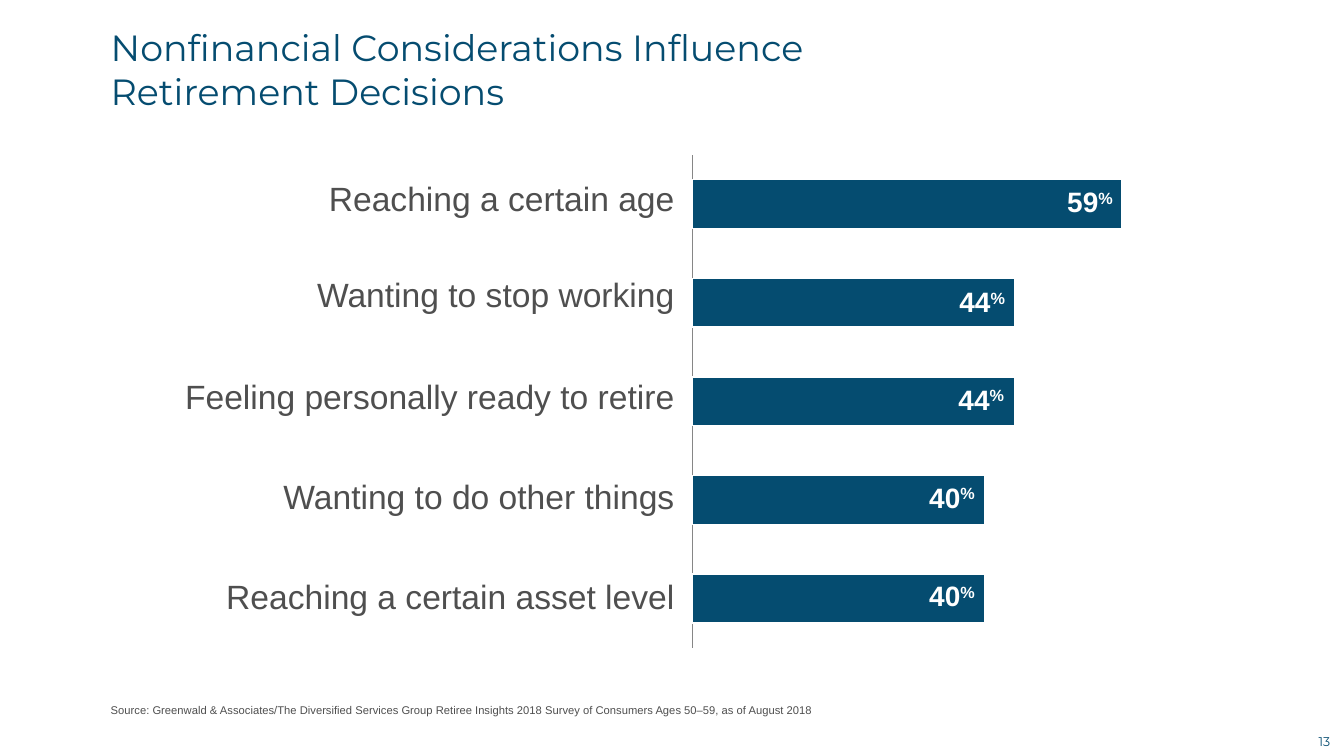
from lxml import etree
from pptx import Presentation
from pptx.chart.data import CategoryChartData
from pptx.dml.color import RGBColor
from pptx.enum.chart import XL_CHART_TYPE as ChartType, XL_TICK_LABEL_POSITION as LabelPos
from pptx.enum.chart import XL_TICK_MARK as Tick
from pptx.enum.text import MSO_ANCHOR as Anchor, PP_ALIGN as Align
from pptx.oxml.ns import qn
from pptx.util import Pt

NAVY = RGBColor(0x05, 0x4C, 0x70)
GRAY = RGBColor(0x4F, 0x4F, 0x4F)
AXIS_GRAY = RGBColor(0x86, 0x86, 0x86)
WHITE = RGBColor(0xFF, 0xFF, 0xFF)

# Reason, percent, bar length, label top, percent top, percent right edge
REASONS = [
    ("Reaching a certain age", 59, 100, 127.4, 131.8, 802),
    ("Wanting to stop working", 44, 75, 195.8, 203, 725),
    ("Feeling personally ready to retire", 44, 75, 268.6, 272.9, 724.3),
    ("Wanting to do other things", 40, 68, 339.8, 342.7, 703.4),
    ("Reaching a certain asset level", 40, 68, 411.1, 413.3, 703.4),
]
LABEL_RIGHT, LABEL_W, LABEL_H = 481.7, 380, 28.8
PERCENT_W, PERCENT_H = 104.4, 24.5


class SlideBuilder:
    font = "Arial"
    heading_font = "Montserrat"

    def __init__(self, prs):
        self.s = prs.slides.add_slide(prs.slide_layouts[6])

    def text(self, box, lines, size, color=GRAY, font=None, align=Align.LEFT,
             anchor=Anchor.TOP, bold=False, left=0, right=0, after=0, superscript=None):
        sp = self.s.shapes.add_textbox(*(Pt(v) for v in box))
        tf = sp.text_frame
        tf.word_wrap = True
        tf.vertical_anchor = anchor
        tf.margin_left, tf.margin_right = Pt(left), Pt(right)
        tf.margin_top = tf.margin_bottom = 0
        p = tf.paragraphs[0]
        p.alignment = align
        p.space_after = Pt(after)

        def run(value):
            r = p.add_run()
            r.text = value
            r.font.name = font or self.font
            r.font.size = Pt(size)
            r.font.bold = bold
            r.font.color.rgb = color
            return r

        for i, line in enumerate(lines):
            if i:
                p.add_line_break()
            run(line)
        if superscript:
            run(superscript)._r.get_or_add_rPr().set("baseline", "30000")

    def bar_chart(self, box, names, values, maximum, layout):
        data = CategoryChartData()
        data.categories = names
        data.add_series("Series 1", values)
        chart = self.s.shapes.add_chart(
            ChartType.BAR_CLUSTERED, *(Pt(v) for v in box), data).chart
        chart.has_legend = chart.has_title = False
        chart.font.name, chart.font.size = self.font, Pt(10)
        chart.font.color.rgb = GRAY

        # Axes
        cat, val = chart.category_axis, chart.value_axis
        cat.reverse_order = True
        cat.tick_label_position = LabelPos.NONE
        cat.major_tick_mark = cat.minor_tick_mark = Tick.NONE
        cat.format.line.color.rgb = AXIS_GRAY
        cat.format.line.width = Pt(0.75)
        val.visible = False
        val.has_major_gridlines = False
        val.minimum_scale, val.maximum_scale = 0, maximum
        val.tick_labels.number_format = "0%"
        val.tick_labels.number_format_is_linked = False

        # Bars
        plot = chart.plots[0]
        plot.gap_width = 102
        plot.vary_by_categories = False
        bars = plot.series[0].format
        bars.fill.solid()
        bars.fill.fore_color.rgb = NAVY
        bars.line.color.rgb = WHITE
        bars.line.width = Pt(1)

        # Fixed inner plot area
        area = chart._chartSpace.chart.plotArea
        for old in area.findall(qn("c:layout")):
            area.remove(old)
        outer = etree.Element(qn("c:layout"))
        area.insert(0, outer)
        manual = etree.SubElement(outer, qn("c:manualLayout"))
        settings = [("layoutTarget", "inner"), ("xMode", "edge"), ("yMode", "edge")]
        for tag, value in settings + list(zip("xywh", layout)):
            etree.SubElement(manual, qn("c:" + tag)).set("val", str(value))


def main():
    prs = Presentation()
    prs.slide_width, prs.slide_height = Pt(960), Pt(540)
    b = SlideBuilder(prs)

    # Page number
    b.text((933.8, 520.6, 24.5, 18), ["13"], 9, NAVY, b.heading_font,
           Align.CENTER, Anchor.MIDDLE)

    # Chart
    b.bar_chart((493.9, 110.2, 365.8, 375.1), [str(i + 1) for i in range(len(REASONS))],
                [row[2] for row in REASONS], 119, (0, 0, 1, 0.94))

    # Title and source
    b.text((72, 20.2, 828, 58.3),
           ["Nonfinancial Considerations Influence", "Retirement Decisions"],
           26, NAVY, b.heading_font, anchor=Anchor.MIDDLE, left=7.2)
    b.text((72, 400.3, 806.4, 111.6),
           ["Source: Greenwald & Associates/The Diversified Services Group Retiree Insights "
            "2018 Survey of Consumers Ages 50–59, as of August 2018"],
           8, anchor=Anchor.BOTTOM, left=7.2)

    # Reason labels
    for reason, _, _, top, _, _ in REASONS:
        b.text((LABEL_RIGHT - LABEL_W, top, LABEL_W, LABEL_H), [reason], 24,
               align=Align.RIGHT, after=10)

    # Percentages at the bar ends
    for _, percent, _, _, top, right in REASONS:
        b.text((right - PERCENT_W, top, PERCENT_W, PERCENT_H), [str(percent)], 20, WHITE,
               align=Align.RIGHT, anchor=Anchor.MIDDLE, bold=True, right=7.2,
               after=10, superscript="%")

    prs.save("out.pptx")


if __name__ == "__main__":
    main()
